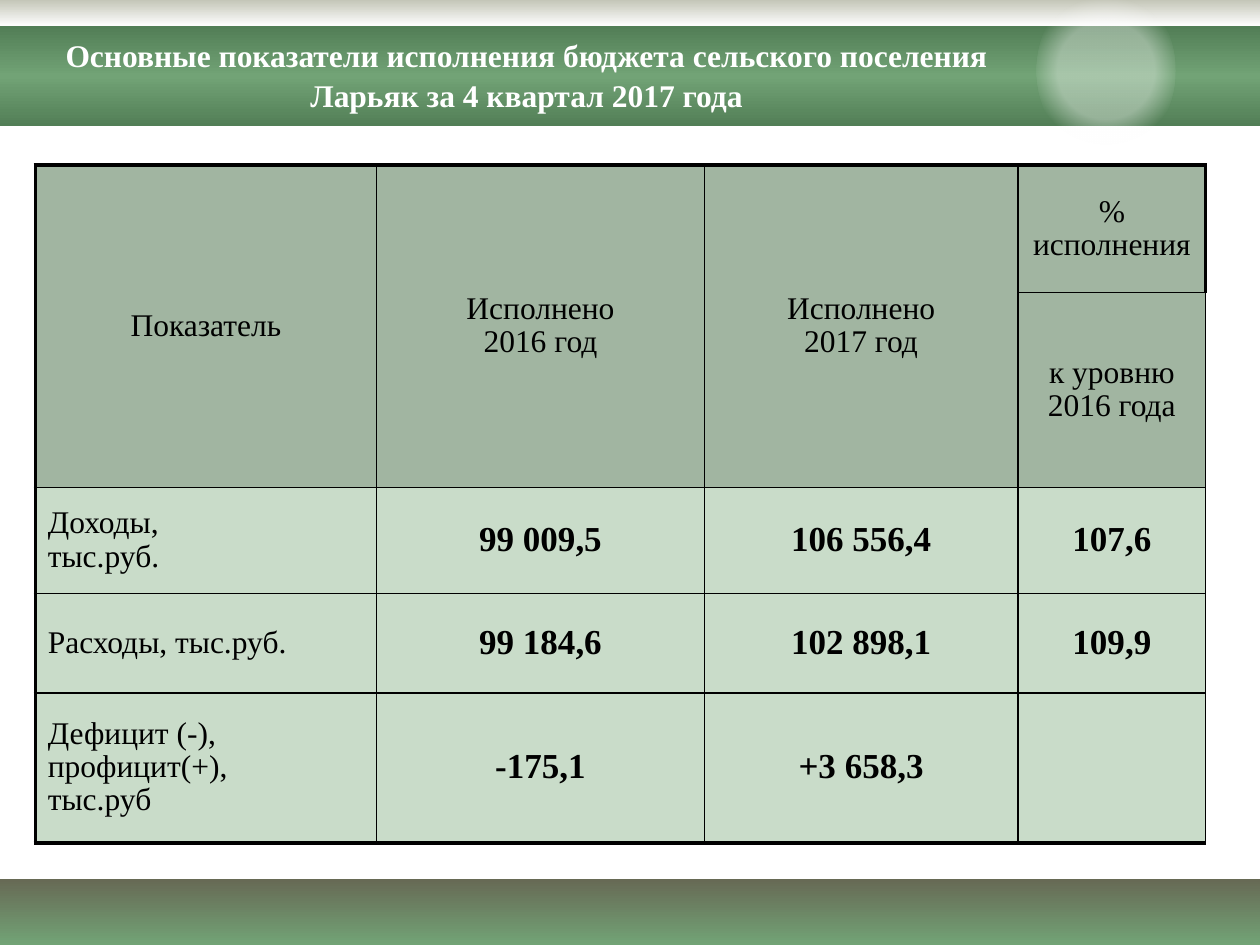
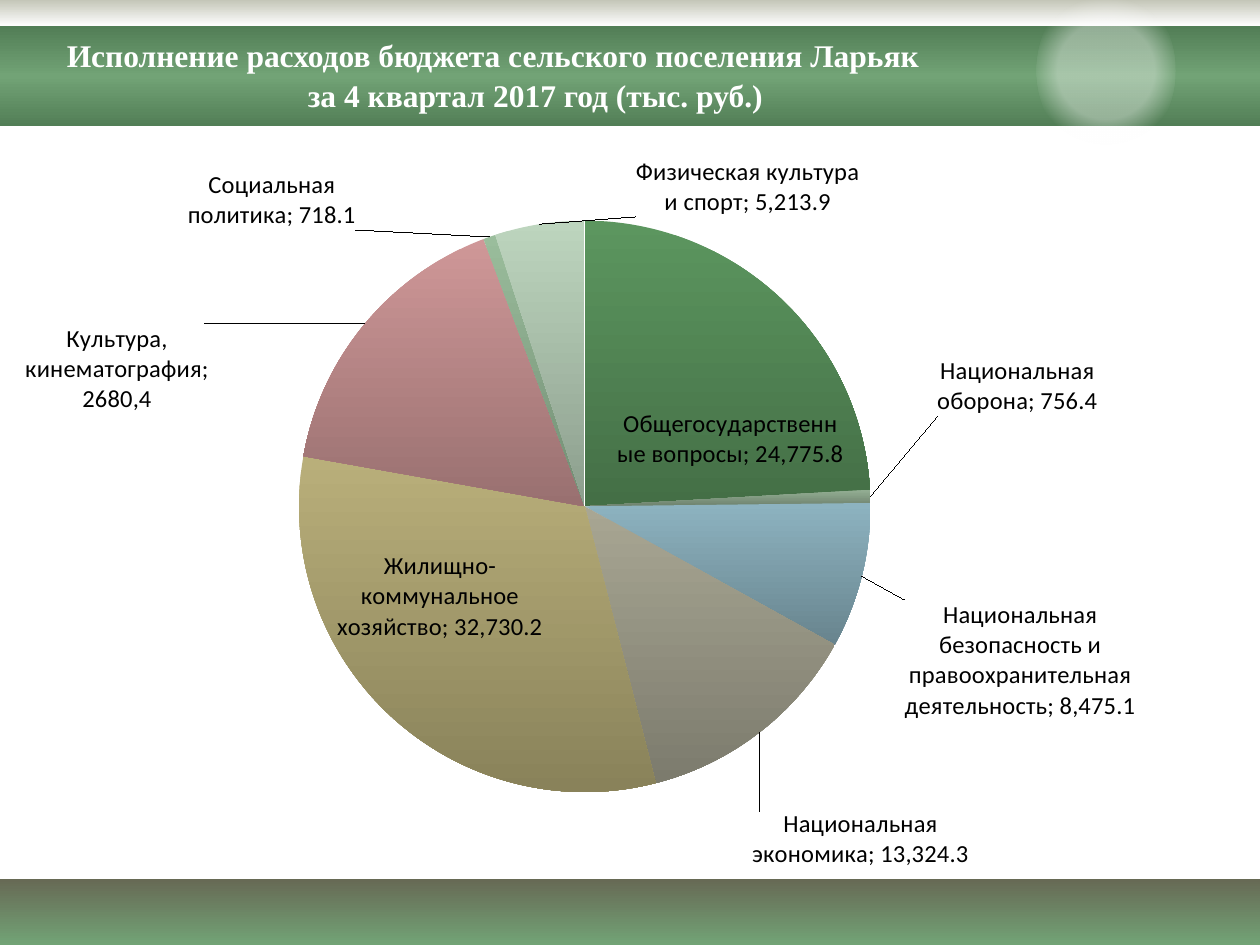
from lxml import etree
from pptx import Presentation
from pptx.chart.data import CategoryChartData
from pptx.dml.color import RGBColor
from pptx.enum.chart import XL_CHART_TYPE as ChartType
from pptx.enum.shapes import MSO_SHAPE as Shape
from pptx.enum.text import MSO_ANCHOR as Anchor, MSO_AUTO_SIZE as AutoSize, PP_ALIGN as Align
from pptx.oxml import parse_xml
from pptx.oxml.ns import nsdecls, qn
from pptx.util import Inches, Pt

BLACK = RGBColor(0x00, 0x00, 0x00)
WHITE = RGBColor(0xFF, 0xFF, 0xFF)
OLIVE = RGBColor(0x67, 0x6A, 0x55)
PALE_OLIVE = RGBColor(0xC4, 0xC6, 0xB8)
GREEN = RGBColor(0x72, 0xA3, 0x76)
DARK_GREEN = RGBColor(0x52, 0x7E, 0x56)
HEADER_FILL = RGBColor(0x4B, 0x73, 0x4B)
BODY_FILL = RGBColor(0x76, 0xA7, 0x76)
SERIF = "Times New Roman"
SANS = "Calibri"
TITLE_ONLY = 5
SLICE_SHADE = 0.74
LINEAR = '<a:lin ang="5400000" scaled="0"/>'
RADIAL = '<a:path path="circle"><a:fillToRect l="50000" t="50000" r="50000" b="50000"/></a:path>'

TABLE_ROWS = [
    ["Показатель", "Исполнено\n2016 год", "Исполнено\n2017 год", "% исполнения"],
    ["", "", "", "к уровню 2016 года"],
    ["Доходы,\nтыс.руб.", "99 009,5", "106 556,4", "107,6"],
    ["Расходы, тыс.руб.", "99 184,6", "102 898,1", "109,9"],
    ["Дефицит (-),\nпрофицит(+),\nтыс.руб", "-175,1", "+3 658,3", ""],
]
COLUMN_WIDTHS = [2.71, 2.6, 2.49, 1.49]
ROW_HEIGHTS = [1.01, 1.55, 0.84, 0.79, 1.19]

# Category, value, slice colour, label position, label offset as a share of the chart, fixed text
EXPENSES = [
    ("Общегосударственные вопросы", 24775.8, RGBColor(0x5C, 0x96, 0x5F), "ctr", (0.04, 0.05), ""),
    ("Национальная оборона", 756.4, RGBColor(0x94, 0xAF, 0x94), "outEnd", (0.05, -0.15), ""),
    ("Национальная безопасность и правоохранительная деятельность", 8475.1,
     RGBColor(0x8D, 0xB3, 0xC0), "outEnd", (0.03, 0.03), ""),
    ("Национальная экономика", 13324.3, RGBColor(0xA8, 0xA6, 0x93), "outEnd", (-0.01, 0.1), ""),
    ("Жилищно-коммунальное хозяйство", 32730.2, RGBColor(0xB9, 0xAF, 0x7A), "ctr", (-0.04, -0.02), ""),
    ("Культура, кинематография", 16904.3, RGBColor(0xCF, 0x97, 0x98), "outEnd", (-0.13, 0.13),
     "Культура, кинематография; 2680,4"),
    ("Социальная политика", 718.1, RGBColor(0x9A, 0xBD, 0x9C), "outEnd", (-0.11, 0), ""),
    ("Физическая культура и спорт", 5213.9, RGBColor(0xBD, 0xD5, 0xBE), "outEnd", (0.27, 0), ""),
]


def add_run(paragraph, text, size, color, bold=False):
    run = paragraph.add_run()
    run.text = text
    run.font.name = SERIF
    run.font.size = Pt(size)
    run.font.bold = bold
    run.font.color.rgb = color


def add_band(slide, layout, kind, box, stops, direction=LINEAR):
    """Draw a gradient shape and move it to the layout, behind its placeholders."""
    shape = slide.shapes.add_shape(kind, *map(Inches, box))
    stop_xml = "".join(
        f'<a:gs pos="{position * 1000}"><a:srgbClr val="{color}">'
        f'<a:alpha val="{alpha * 1000}"/></a:srgbClr></a:gs>'
        for position, color, alpha in stops)
    shape.element.spPr.append(parse_xml(
        f'<a:gradFill {nsdecls("a")} rotWithShape="1"><a:gsLst>{stop_xml}</a:gsLst>'
        f'{direction}</a:gradFill>'))
    shape.line.fill.background()
    shape.shadow.inherit = False
    layout.shapes.element.append(shape.element)


def decorate_layout(slide, layout):
    add_band(slide, layout, Shape.RECTANGLE, (0, 6.98, 10, 0.52),
             [(0, OLIVE, 100), (100, GREEN, 100)])
    add_band(slide, layout, Shape.RECTANGLE, (0, 0, 10, 0.21),
             [(0, PALE_OLIVE, 100), (100, WHITE, 100)])
    add_band(slide, layout, Shape.RECTANGLE, (0, 0.21, 10, 0.79),
             [(0, DARK_GREEN, 100), (50, GREEN, 100), (100, DARK_GREEN, 100)])
    add_band(slide, layout, Shape.OVAL, (8.23, -0.11, 1.1, 1.34),
             [(44, WHITE, 38), (67, WHITE, 0)], RADIAL)


def set_title(slide, box, lines):
    """Fill the title with (text, alignment) lines."""
    title = slide.shapes.title
    title.left, title.top, title.width, title.height = map(Inches, box)
    frame = title.text_frame
    frame.word_wrap = True
    frame.auto_size = AutoSize.NONE
    frame.vertical_anchor = Anchor.TOP
    for index, (text, alignment) in enumerate(lines):
        paragraph = frame.add_paragraph() if index else frame.paragraphs[0]
        paragraph.alignment = alignment
        paragraph.line_spacing = 1.08
        add_run(paragraph, text, 18, WHITE, bold=True)


def set_borders(cell, widths):
    properties = cell._tc.get_or_add_tcPr()
    for side, width in zip("LRTB", widths):
        properties.append(parse_xml(
            f'<a:ln{side} {nsdecls("a")} w="{Pt(width)}"><a:solidFill>'
            f'<a:srgbClr val="{BLACK}"/></a:solidFill></a:ln{side}>'))


def set_fill(cell, color, alpha):
    cell.fill.solid()
    cell.fill.fore_color.rgb = color
    color_element = cell._tc.tcPr.find(f'{qn("a:solidFill")}/{qn("a:srgbClr")}')
    etree.SubElement(color_element, qn("a:alpha")).set("val", str(alpha * 1000))


def fill_cell(cell, row, column, text):
    last_row, last_column = len(TABLE_ROWS) - 1, len(COLUMN_WIDTHS) - 1
    is_header = row < 2
    is_figure = not is_header and column > 0
    thick_sides = (column == 0, row == 0 and column == last_column, row == 0, row == last_row)
    set_borders(cell, [2.25 if thick else 1 for thick in thick_sides])
    set_fill(cell, *((HEADER_FILL, 52) if is_header else (BODY_FILL, 39)))
    cell.vertical_anchor = Anchor.MIDDLE
    if not text:
        return
    for index, line in enumerate(text.split("\n")):
        paragraph = cell.text_frame.add_paragraph() if index else cell.text_frame.paragraphs[0]
        paragraph.alignment = Align.CENTER if is_header or is_figure else Align.LEFT
        paragraph.line_spacing = 0.95
        add_run(paragraph, line, 20 if is_figure else 18, BLACK, bold=is_figure)


def add_budget_table(slide, box):
    table = slide.shapes.add_table(len(ROW_HEIGHTS), len(COLUMN_WIDTHS), *map(Inches, box)).table
    table.first_row = table.horz_banding = False
    for column, width in zip(table.columns, COLUMN_WIDTHS):
        column.width = Inches(width)
    for row, height in zip(table.rows, ROW_HEIGHTS):
        row.height = Inches(height)
    for column in range(3):
        table.cell(0, column).merge(table.cell(1, column))
    for row, texts in enumerate(TABLE_ROWS):
        for column, text in enumerate(texts):
            fill_cell(table.cell(row, column), row, column, text)


def label_xml(index, position, offset, fixed_text):
    font = (f'<a:defRPr sz="1400"><a:solidFill><a:srgbClr val="{BLACK}"/></a:solidFill>'
            f'<a:latin typeface="{SANS}"/></a:defRPr>')
    rich = ""
    if fixed_text:
        rich = (f'<c:tx><c:rich><a:bodyPr/><a:p><a:pPr>{font}</a:pPr>'
                f'<a:r>{font.replace("defRPr", "rPr")}<a:t>{fixed_text}</a:t></a:r></a:p></c:rich></c:tx>')
    return (f'<c:dLbl><c:idx val="{index}"/><c:layout><c:manualLayout>'
            f'<c:x val="{offset[0]}"/><c:y val="{offset[1]}"/></c:manualLayout></c:layout>{rich}'
            '<c:numFmt formatCode="#,##0.0" sourceLinked="0"/><c:spPr><a:noFill/></c:spPr>'
            f'<c:txPr><a:bodyPr/><a:p><a:pPr>{font}</a:pPr></a:p></c:txPr>'
            f'<c:dLblPos val="{position}"/>{label_flags()}</c:dLbl>')


def label_flags():
    flags = {"LegendKey": 0, "Val": 1, "CatName": 1, "SerName": 0, "Percent": 0, "BubbleSize": 0}
    return "".join(f'<c:show{name} val="{value}"/>' for name, value in flags.items()) + \
        "<c:separator>; </c:separator>"


def add_expense_pie(slide, box):
    data = CategoryChartData(number_format="#,##0.0")
    data.categories = [expense[0] for expense in EXPENSES]
    data.add_series("Series 1", [expense[1] for expense in EXPENSES])
    chart = slide.shapes.add_chart(ChartType.PIE, *map(Inches, box), data).chart
    chart.has_legend = chart.has_title = False
    chart.font.name = SANS
    chart.font.size = Pt(18)
    chart.font.color.rgb = BLACK
    plot = chart.plots[0]
    plot.vary_by_categories = True
    series = plot.series[0]
    labels = ""
    for index, (_, _, color, position, offset, fixed_text) in enumerate(EXPENSES):
        fill = series.points[index].format.fill
        fill.gradient()
        fill.gradient_angle = 270
        shade = RGBColor(*(round(channel * SLICE_SHADE) for channel in color))
        for stop, stop_color in zip(fill.gradient_stops, (color, shade)):
            stop.color.rgb = stop_color
        labels += label_xml(index, position, offset, fixed_text)
    series._element.find(qn("c:cat")).addprevious(parse_xml(
        f'<c:dLbls {nsdecls("c", "a")}>{labels}{label_flags()}<c:showLeaderLines val="1"/></c:dLbls>'))
    place_plot(chart, x=0.226, y=0.113, w=0.485, h=0.789)


def place_plot(chart, **shares):
    """Fix the inner plot area, in shares of the chart's size."""
    plot_area = chart.element.find(f'.//{qn("c:plotArea")}')
    for layout in plot_area.findall(qn("c:layout")):
        plot_area.remove(layout)
    values = "".join(f'<c:{name} val="{share:.2f}"/>' for name, share in shares.items())
    plot_area.insert(0, parse_xml(
        f'<c:layout {nsdecls("c")}><c:manualLayout><c:layoutTarget val="inner"/>'
        f'<c:xMode val="edge"/><c:yMode val="edge"/>{values}</c:manualLayout></c:layout>'))


def main():
    presentation = Presentation()
    presentation.slide_width, presentation.slide_height = Inches(10), Inches(7.5)
    layout = presentation.slide_layouts[TITLE_ONLY]

    budget_slide = presentation.slides.add_slide(layout)
    decorate_layout(budget_slide, layout)
    set_title(budget_slide, (0.28, 0.21, 7.8, 0.71), [
        ("Основные показатели исполнения бюджета сельского поселения Ларьяк за 4 квартал 2017 года",
         Align.CENTER)])
    add_budget_table(budget_slide, (0.28, 1.31, 9.29, 5.39))

    expense_slide = presentation.slides.add_slide(layout)
    set_title(expense_slide, (0.43, 0.21, 7.64, 0.71), [
        ("Исполнение расходов бюджета сельского поселения Ларьяк", Align.LEFT),
        ("за 4 квартал 2017 год (тыс. руб.)", Align.CENTER)])
    add_expense_pie(expense_slide, (0.2, 1.08, 9.45, 5.82))
    presentation.save("out.pptx")


if __name__ == "__main__":
    main()
